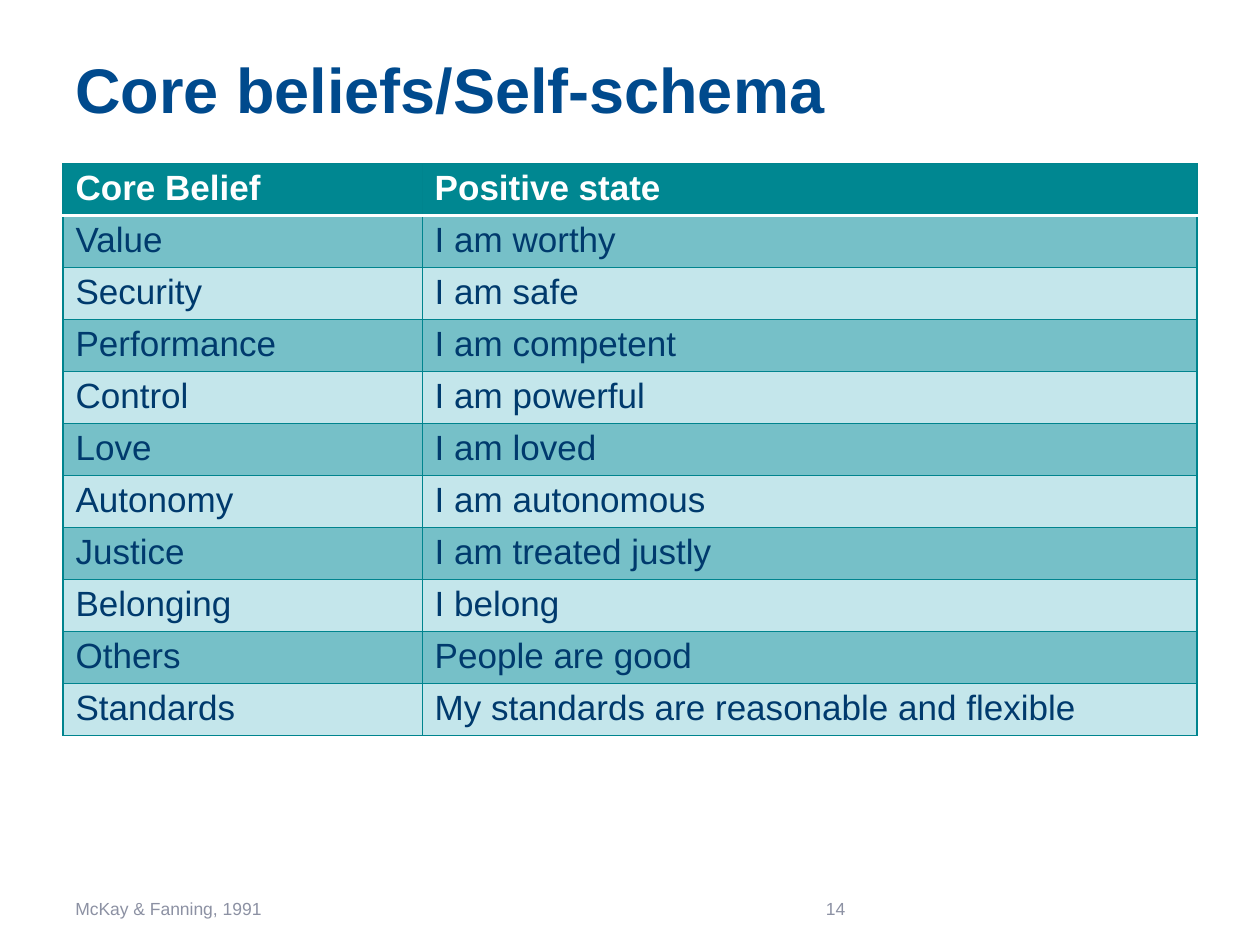
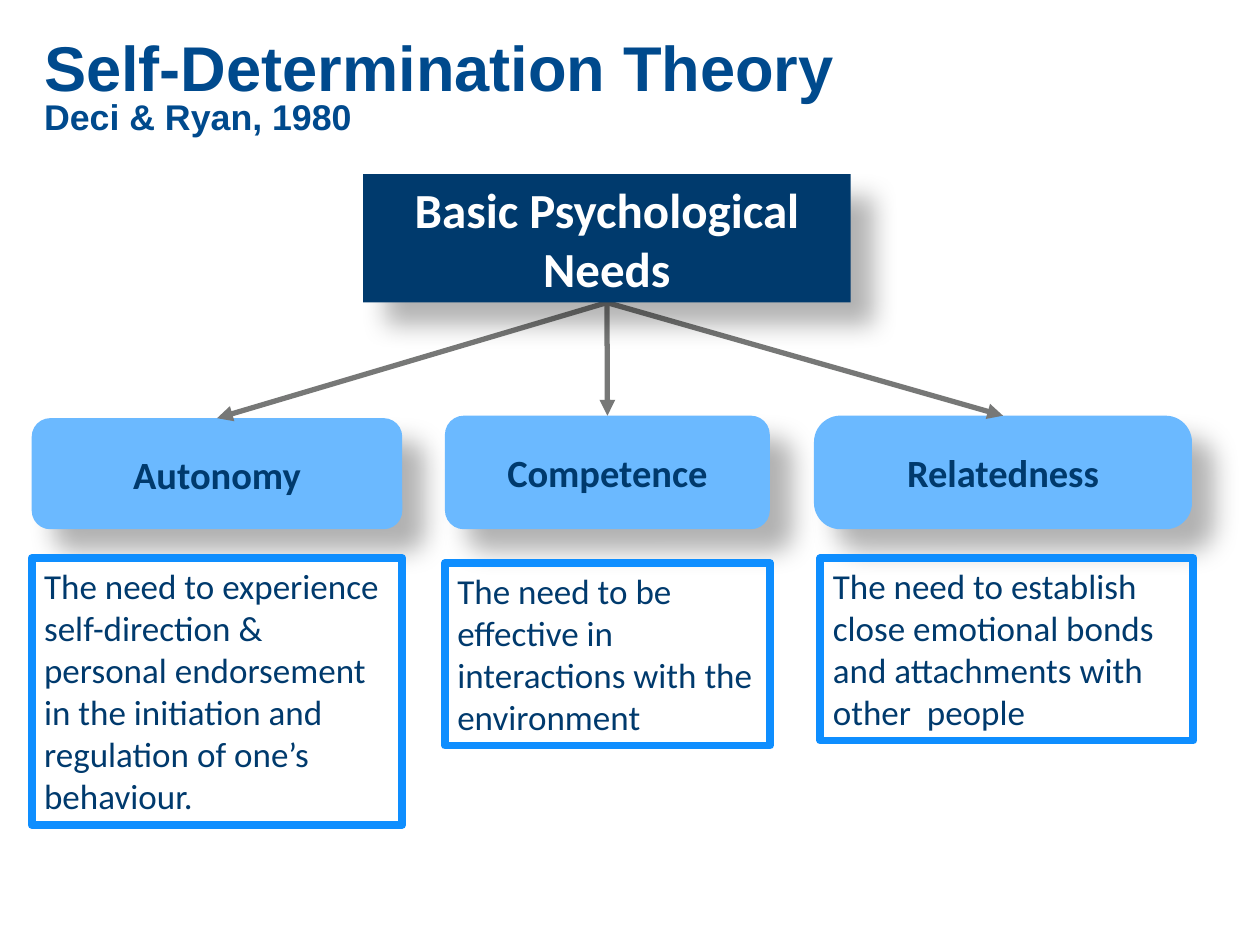
from lxml.etree import SubElement
from pptx import Presentation
from pptx.dml.color import RGBColor
from pptx.enum.shapes import MSO_CONNECTOR, MSO_SHAPE
from pptx.enum.text import MSO_ANCHOR, PP_ALIGN
from pptx.oxml import parse_xml
from pptx.oxml.ns import nsdecls, qn
from pptx.util import Cm, Pt

WHITE = RGBColor(0xFF, 0xFF, 0xFF)
TITLE_BLUE = RGBColor(0x00, 0x4A, 0x8D)
NAVY = RGBColor(0x00, 0x3A, 0x6D)
SKY = RGBColor(0x6B, 0xB9, 0xFF)
BRIGHT_BLUE = RGBColor(0x0E, 0x8E, 0xFF)
GREY = RGBColor(0x77, 0x78, 0x77)
FOOTER_GREY = RGBColor(0x8C, 0x91, 0xA3)
TEAL = RGBColor(0x00, 0x87, 0x91)
TEAL_BORDER = RGBColor(0x00, 0x84, 0x8E)
TEAL_MEDIUM = RGBColor(0x76, 0xC0, 0xC8)
TEAL_LIGHT = RGBColor(0xC4, 0xE6, 0xEB)


def write_text(shape, text, size, color, font="Arial", bold=False,
               align=PP_ALIGN.LEFT, anchor=MSO_ANCHOR.MIDDLE):
    """Fill a shape with one wrapped paragraph and return that paragraph."""
    frame = shape.text_frame
    frame.word_wrap = True
    frame.vertical_anchor = anchor
    paragraph = frame.paragraphs[0]
    paragraph.text = text
    paragraph.alignment = align
    paragraph.font.name = font
    paragraph.font.size = Pt(size)
    paragraph.font.bold = bold
    paragraph.font.color.rgb = color
    return paragraph


def add_shadowed_box(slide, kind, bounds, fill, text, size, color):
    box = slide.shapes.add_shape(kind, *map(Cm, bounds))
    box.fill.solid()
    box.fill.fore_color.rgb = fill
    box.line.fill.background()
    box._element.spPr.append(parse_xml(
        f'<a:effectLst {nsdecls("a")}><a:outerShdw blurRad="{Pt(15)}" dist="{Pt(18)}"'
        ' dir="2700000" algn="tl" rotWithShape="0"><a:srgbClr val="000000">'
        '<a:alpha val="30000"/></a:srgbClr></a:outerShdw></a:effectLst>'))
    write_text(box, text, size, color, "Calibri", True, PP_ALIGN.CENTER)
    return box


presentation = Presentation()
presentation.slide_width = Cm(25.4)
presentation.slide_height = Cm(19.05)
blank = presentation.slide_layouts[6]

# Slide 1: core beliefs table
slide = presentation.slides.add_slide(blank)
title = slide.shapes.add_textbox(Cm(1.27), Cm(0.9), Cm(22.86), Cm(2))
write_text(title, "Core beliefs/Self-schema", 36, TITLE_BLUE, bold=True,
           anchor=MSO_ANCHOR.TOP)

beliefs = [
    ("Core Belief", "Positive state"),
    ("Value", "I am worthy"),
    ("Security", "I am safe"),
    ("Performance", "I am competent"),
    ("Control", "I am powerful"),
    ("Love", "I am loved"),
    ("Autonomy", "I am autonomous"),
    ("Justice", "I am treated justly"),
    ("Belonging", "I belong"),
    ("Others", "People are good"),
    ("Standards", "My standards are reasonable and flexible"),
]
row_height = Cm(1.04)
table = slide.shapes.add_table(len(beliefs), 2, Cm(1.27), Cm(3.3), Cm(22.86),
                               row_height * len(beliefs)).table
table.columns[0].width = Cm(7.24)
table.columns[1].width = Cm(15.62)
for row_index, row in enumerate(beliefs):
    table.rows[row_index].height = row_height
    is_header = row_index == 0
    fill = TEAL if is_header else TEAL_MEDIUM if row_index % 2 else TEAL_LIGHT
    for column_index, text in enumerate(row):
        cell = table.cell(row_index, column_index)
        cell.margin_top = cell.margin_bottom = Cm(0.1)
        properties = cell._tc.get_or_add_tcPr()
        for side in ("lnL", "lnR", "lnT", "lnB"):
            under_header = (row_index, side) in ((0, "lnB"), (1, "lnT"))
            border = SubElement(properties, qn(f"a:{side}"),
                                w=str(Pt(2 if under_header else 0.75)))
            border_fill = SubElement(border, qn("a:solidFill"))
            SubElement(border_fill, qn("a:srgbClr"),
                       val=str(WHITE if under_header else TEAL_BORDER))
        cell.fill.solid()
        cell.fill.fore_color.rgb = fill
        write_text(cell, text, 20, WHITE if is_header else NAVY, bold=is_header,
                   anchor=MSO_ANCHOR.TOP)

for left, width, text, align in (
    (1.27, 13.06, "McKay & Fanning, 1991", PP_ALIGN.LEFT),
    (14.6, 2.69, "14", PP_ALIGN.RIGHT),
):
    footer = slide.shapes.add_textbox(Cm(left), Cm(17.98), Cm(width), Cm(0.69))
    write_text(footer, text, 10, FOOTER_GREY, align=align)

# Slide 2: self-determination theory
slide = presentation.slides.add_slide(blank)
needs = [
    ("Autonomy", (0.64, 8.43, 7.47, 2.24), 0.167, (0.64, 11.25, 7.47, 5.38),
     "The need to experience self-direction & personal endorsement in the "
     "initiation and regulation of one’s behaviour."),
    ("Competence", (8.97, 8.38, 6.55, 2.29), 0.167, (8.97, 11.35, 6.55, 3.68),
     "The need to be effective in interactions with the environment"),
    ("Relatedness", (16.41, 8.38, 7.62, 2.29), 0.233, (16.54, 11.25, 7.52, 3.68),
     "The need to establish close emotional bonds and attachments with other  people"),
]
arrows = []
for name, box_bounds, rounding, description_bounds, text in needs:
    need_box = add_shadowed_box(slide, MSO_SHAPE.ROUNDED_RECTANGLE, box_bounds,
                                SKY, name, 22, NAVY)
    need_box.adjustments[0] = rounding

    description = slide.shapes.add_shape(MSO_SHAPE.RECTANGLE,
                                         *map(Cm, description_bounds))
    description.shadow.inherit = False
    if name == "Autonomy":
        description.fill.solid()
        description.fill.fore_color.rgb = WHITE
    else:
        description.fill.background()
    description.line.color.rgb = BRIGHT_BLUE
    description.line.width = Pt(4.5)
    write_text(description, text, 20, NAVY, "Calibri", anchor=MSO_ANCHOR.TOP)

    arrow = slide.shapes.add_connector(MSO_CONNECTOR.STRAIGHT, 0, 0, 0, 0)
    arrow.end_connect(need_box, 0)
    arrow.line.color.rgb = GREY
    arrow.line.width = Pt(3)
    SubElement(arrow.line._get_or_add_ln(), qn("a:tailEnd"), type="triangle")
    SubElement(arrow._element.spPr, qn("a:effectLst"))
    arrows.append(arrow)

# The heading box comes last so that its shadow falls over the arrows
needs_heading = add_shadowed_box(slide, MSO_SHAPE.RECTANGLE, (7.32, 3.51, 9.83, 2.59),
                                 NAVY, "Basic Psychological Needs", 28, WHITE)
for arrow in arrows:
    arrow.begin_connect(needs_heading, 2)

title = slide.shapes.add_textbox(Cm(0.64), Cm(0.66), Cm(20.02), Cm(2.31))
paragraph = write_text(title, "Self-Determination Theory\vDeci & Ryan, 1980", 36.1,
                       TITLE_BLUE, bold=True)
paragraph.line_spacing = 0.8
paragraph.runs[1].font.size = Pt(20.4)

presentation.save("out.pptx")
